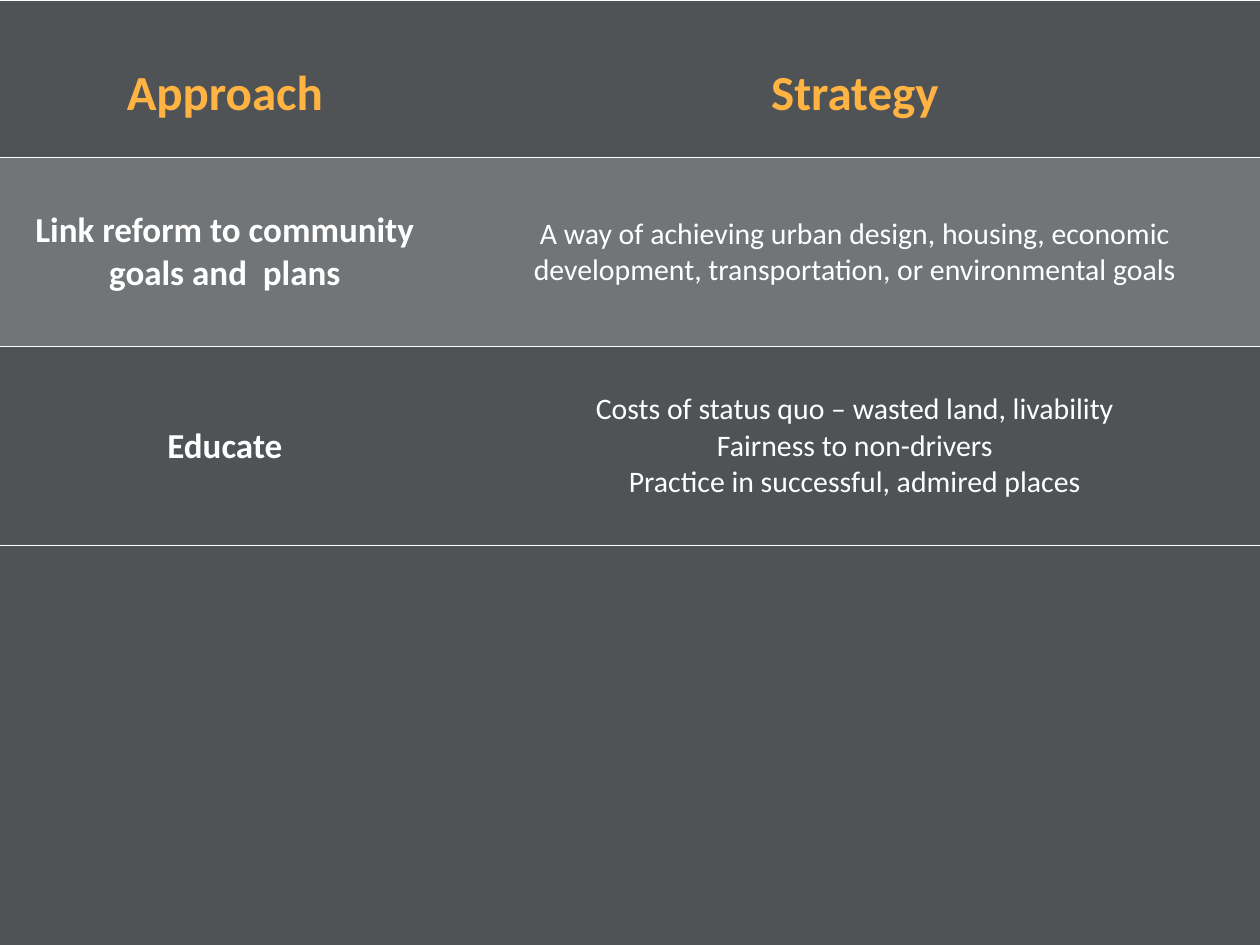
import dataclasses

import pptx
import pptx.dml.color
import pptx.enum.text
import pptx.oxml.ns
import pptx.util
from lxml import etree

Inches = pptx.util.Inches
Pt = pptx.util.Pt
RGB = pptx.dml.color.RGBColor.from_string
qn = pptx.oxml.ns.qn


@dataclasses.dataclass(frozen=True)
class Theme:
    font: str = "Calibri"
    background: str = "4F5355"
    accent: str = "FFB343"
    text: str = "FFFFFF"
    band_opacity: int = 20
    header_size: int = 28
    approach_size: int = 20
    strategy_size: int = 17
    rule_width: int = 1


THEME = Theme()
NO_STYLE = "{2D5ABB26-0587-4C30-8999-92F81FD0307C}"

HEADERS = ("Approach", "Strategy")
ROWS = (
    ("Link reform to community goals and  plans",
     "A way of achieving urban design, housing, economic development, "
     "transportation, or environmental goals"),
    ("Educate",
     "Costs of status quo – wasted land, livability\n"
     "Fairness to non-drivers\n"
     "Practice in successful, admired places"),
)
COLUMN_WIDTHS = (3.57, 6.43)
ROW_HEIGHTS = (1.25, 1.5, 1.58)


def fill_cell(cell, text, size, color, bold, spacing=1.0, inset=(0.1, 0.1)):
    """Write centred text, one paragraph per line."""
    cell.margin_left = cell.margin_right = Inches(inset[0])
    cell.margin_top = cell.margin_bottom = Inches(inset[1])
    cell.vertical_anchor = pptx.enum.text.MSO_ANCHOR.MIDDLE
    cell.fill.background()
    cell.text_frame.text = text
    for p in cell.text_frame.paragraphs:
        p.alignment = pptx.enum.text.PP_ALIGN.CENTER
        p.line_spacing = spacing
        for r in p.runs:
            r.font.name = THEME.font
            r.font.size = Pt(size)
            r.font.bold = bold
            r.font.color.rgb = RGB(color)


def tint_cell(cell):
    """Lay a translucent band behind the text."""
    cell.fill.solid()
    cell.fill.fore_color.rgb = RGB(THEME.text)
    color = cell._tc.tcPr.find(".//" + qn("a:srgbClr"))
    etree.SubElement(color, qn("a:alpha"), val=str(THEME.band_opacity * 1000))


def rule_cell(cell, sides):
    """Draw horizontal rules; borders must precede the fill."""
    for i, side in enumerate(sides):
        ln = etree.Element(qn("a:ln" + side), w=str(Pt(THEME.rule_width)))
        fill = etree.SubElement(ln, qn("a:solidFill"))
        etree.SubElement(fill, qn("a:srgbClr"), val=THEME.text)
        cell._tc.tcPr.insert(i, ln)


def add_strategy_table(s, left, top, width, height):
    frame = s.shapes.add_table(len(ROWS) + 1, len(HEADERS),
                               left, top, width, height)
    table = frame.table
    table._tbl.tblPr.find(qn("a:tableStyleId")).text = NO_STYLE
    table.horz_banding = False
    for column, share in zip(table.columns, COLUMN_WIDTHS):
        column.width = int(width * share / sum(COLUMN_WIDTHS))
    for row, share in zip(table.rows, ROW_HEIGHTS):
        row.height = int(height * share / sum(ROW_HEIGHTS))

    # Header row
    for col, text in enumerate(HEADERS):
        cell = table.cell(0, col)
        fill_cell(cell, text, THEME.header_size, THEME.accent, True,
                  spacing=1.5, inset=(0.05, 0))
        rule_cell(cell, "TB")

    # Body rows: bold approach, plain strategy, odd rows tinted
    sizes = (THEME.approach_size, THEME.strategy_size)
    for i, texts in enumerate(ROWS, start=1):
        for col, text in enumerate(texts):
            cell = table.cell(i, col)
            fill_cell(cell, text, sizes[col], THEME.text, col == 0)
            if i % 2:
                tint_cell(cell)
            if i == 1:
                rule_cell(cell, "T")
            if i == len(ROWS):
                rule_cell(cell, "B")


def main():
    prs = pptx.Presentation()
    prs.slide_width, prs.slide_height = Inches(10), Inches(7.5)
    s = prs.slides.add_slide(prs.slide_layouts[6])
    s.background.fill.solid()
    s.background.fill.fore_color.rgb = RGB(THEME.background)
    add_strategy_table(s, 0, 0, prs.slide_width, Inches(sum(ROW_HEIGHTS)))
    prs.save("out.pptx")


if __name__ == "__main__":
    main()
